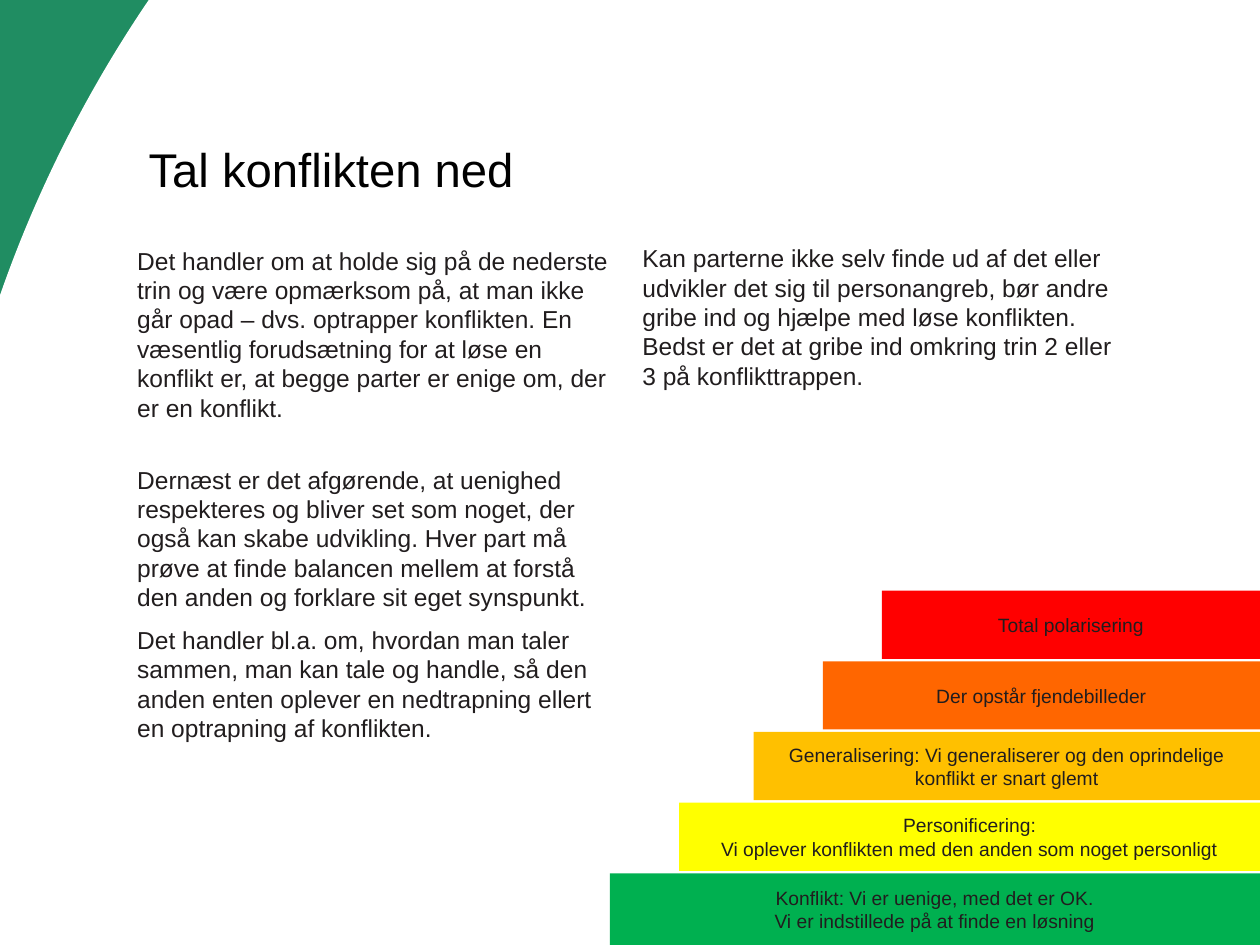
from pptx import Presentation
from pptx.dml.color import RGBColor
from pptx.enum.shapes import MSO_SHAPE
from pptx.enum.text import MSO_ANCHOR, PP_ALIGN
from pptx.util import Pt

WIDTH, HEIGHT = 720, 540
GREEN, WHITE, BLACK, INK = "208D62", "FFFFFF", "000000", "211D1E"

TITLE = "Tal konflikten ned"
# Each paragraph: space before in points, text
LEFT_COLUMN = [
    (0, "Det handler om at holde sig på de nederste trin og være opmærksom på, at man ikke "
        "går opad – dvs. optrapper konflikten. En væsentlig forudsætning for at løse en "
        "konflikt er, at begge parter er enige om, der er en konflikt."),
    (24.3, "Dernæst er det afgørende, at uenighed respekteres og bliver set som noget, der "
           "også kan skabe udvikling. Hver part må prøve at finde balancen mellem at forstå "
           "den anden og forklare sit eget synspunkt."),
    (7.5, "Det handler bl.a. om, hvordan man taler sammen, man kan tale og handle, så den "
          "anden enten oplever en nedtrapning ellert en optrapning af konflikten."),
]
RIGHT_COLUMN = [
    (0, "Kan parterne ikke selv finde ud af det eller udvikler det sig til personangreb, bør "
        "andre gribe ind og hjælpe med løse konflikten. Bedst er det at gribe ind omkring "
        "trin 2 eller 3 på konflikttrappen."),
]
# Steps from top to bottom: left edge, colour, text
STEPS = [
    (504, "FF0000", "Total polarisering"),
    (470.2, "FF6600", "Der opstår fjendebilleder"),
    (430.6, "FFC000", "Generalisering: Vi generaliserer og den oprindelige konflikt er snart glemt"),
    (388.1, "FFFF00", "Personificering:\vVi oplever konflikten med den anden som noget personligt"),
    (348.5, "00B050", "Konflikt: Vi er uenige, med det er OK.\vVi er indstillede på at finde en løsning"),
]
STEP_TOP, STEP_PITCH, STEP_GAP = 337.5, 40.4, 1.4


def color(value):
    return RGBColor.from_string(value)


def write(shape, paragraphs, size, ink, anchor=MSO_ANCHOR.TOP, **formats):
    frame = shape.text_frame
    frame.word_wrap = True
    frame.vertical_anchor = anchor
    for index, (space, text) in enumerate(paragraphs):
        para = frame.paragraphs[0] if index == 0 else frame.add_paragraph()
        para.text = text
        for name, value in {"space_before": Pt(space), **formats}.items():
            setattr(para, name, value)
        for span in para.runs:
            for name, value in {"name": "Arial", "size": Pt(size)}.items():
                setattr(span.font, name, value)
            span.font.color.rgb = color(ink)


def add_text(page, area, *content, **formats):
    box = page.shapes.add_textbox(*map(Pt, area))
    write(box, *content, **formats)


def add_plain_shape(page, kind, area, fill):
    shape = page.shapes.add_shape(kind, *map(Pt, area))
    shape.shadow.inherit = False
    shape.fill.solid()
    shape.fill.fore_color.rgb = color(fill)
    shape.line.fill.background()
    return shape


def main():
    deck = Presentation()
    deck.slide_width, deck.slide_height = Pt(WIDTH), Pt(HEIGHT)
    page = deck.slides.add_slide(deck.slide_layouts[6])
    page.background.fill.solid()
    page.background.fill.fore_color.rgb = color(GREEN)

    curve = add_plain_shape(page, MSO_SHAPE.OVAL, (2.9, -285.8, 756.7, 1051.2), WHITE)
    curve.rotation = 29
    add_plain_shape(page, MSO_SHAPE.RECTANGLE, (615, 360, 105, 180), WHITE)

    add_text(page, (77.8, 82.8, 620.6, 31), [(0, TITLE)], 27, BLACK,
             MSO_ANCHOR.MIDDLE, line_spacing=0.9)
    add_text(page, (71.3, 136.8, 287.3, 342.7), LEFT_COLUMN, 14, INK)
    add_text(page, (360, 135.4, 287.3, 342.7), RIGHT_COLUMN, 14, INK)

    for index, (left, fill, text) in enumerate(STEPS):
        top = STEP_TOP + index * STEP_PITCH
        bottom = HEIGHT if index == len(STEPS) - 1 else top + STEP_PITCH - STEP_GAP
        step = add_plain_shape(page, MSO_SHAPE.RECTANGLE,
                               (left, top, WIDTH - left, bottom - top), fill)
        write(step, [(0, text)], 11, INK, MSO_ANCHOR.MIDDLE, alignment=PP_ALIGN.CENTER)

    deck.save("out.pptx")


if __name__ == "__main__":
    main()
